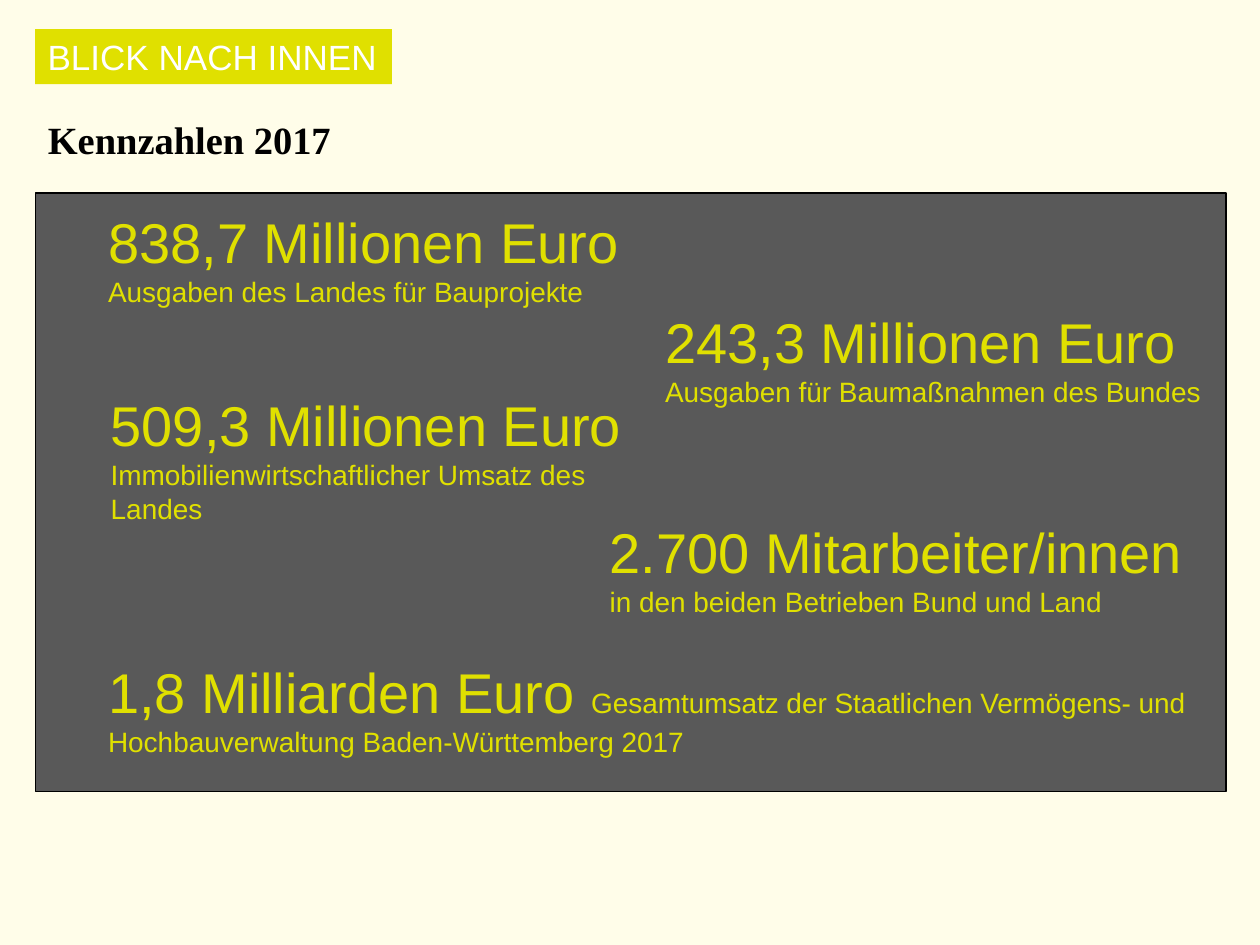
"""Build the key figures slide for 2017."""
import pptx
import pptx.dml.color
import pptx.enum.shapes
import pptx.enum.text
import pptx.util

Pt = pptx.util.Pt
RGBColor = pptx.dml.color.RGBColor

CREAM = RGBColor(0xFF, 0xFD, 0xE9)
GREY = RGBColor(0x59, 0x59, 0x59)
LIME = RGBColor(0xE0, 0xE0, 0x00)
WHITE = RGBColor(0xFF, 0xFF, 0xFF)
BLACK = RGBColor(0x00, 0x00, 0x00)

MARGIN = 20.16
FIGURE_HEIGHT = 65.5
FIGURES = [
    (54.7, 115.2, 370.8, FIGURE_HEIGHT, "838,7 Millionen Euro ",
     "Ausgaben des Landes für Bauprojekte"),
    (373, 172.1, 321.8, FIGURE_HEIGHT, "243,3 Millionen Euro ",
     "Ausgaben für Baumaßnahmen des Bundes"),
    (56.2, 219.6, 316.8, 85, "509,3 Millionen Euro ",
     "Immobilienwirtschaftlicher Umsatz des Landes"),
    (341.3, 292.3, 357.1, FIGURE_HEIGHT, "2.700 Mitarbeiter/innen ",
     "in den beiden Betrieben Bund und Land"),
    (54.7, 372.2, 643.7, FIGURE_HEIGHT, "1,8 Milliarden Euro ",
     "Gesamtumsatz der Staatlichen Vermögens- und "
     "Hochbauverwaltung Baden-Württemberg 2017"),
]


def style_span(span, size, color, name="Arial", bold=False):
    """Set the font of one run."""
    span.font.name = name
    span.font.size = Pt(size)
    span.font.bold = bold
    span.font.color.rgb = color


def align_text(frame):
    """Wrap the text and start it at the top left."""
    frame.word_wrap = True
    frame.vertical_anchor = pptx.enum.text.MSO_ANCHOR.TOP
    frame.paragraphs[0].alignment = pptx.enum.text.PP_ALIGN.LEFT


def add_panel(page, left, top, width, height, fill):
    """Add a plain filled rectangle without an outline."""
    panel = page.shapes.add_shape(
        pptx.enum.shapes.MSO_SHAPE.RECTANGLE,
        Pt(left), Pt(top), Pt(width), Pt(height))
    panel.shadow.inherit = False
    panel.fill.solid()
    panel.fill.fore_color.rgb = fill
    panel.line.fill.background()
    return panel


def add_label(page, text):
    """Add the section label."""
    label = add_panel(page, MARGIN, 16.6, 203.8, 31.5, LIME)
    align_text(label.text_frame)
    label.text_frame.word_wrap = False
    para = label.text_frame.paragraphs[0]
    para.text = text
    style_span(para.runs[0], 20, WHITE)


def set_title(page, text):
    """Place and format the title."""
    title = page.shapes.title
    title.left, title.top = Pt(MARGIN), Pt(62.6)
    title.width, title.height = Pt(675.4), Pt(33.8)
    title.text_frame.text = text
    align_text(title.text_frame)
    style_span(title.text_frame.paragraphs[0].runs[0], 22, BLACK,
               "Times New Roman", True)


def add_figure(page, left, top, width, height, amount, caption):
    """Add a large amount followed by its caption."""
    box = page.shapes.add_textbox(Pt(left), Pt(top), Pt(width), Pt(height))
    align_text(box.text_frame)
    para = box.text_frame.paragraphs[0]
    for text, size in ((amount, 32), (caption, 16)):
        span = para.add_run()
        span.text = text
        style_span(span, size, LIME)


def main():
    """Create and save the deck."""
    deck = pptx.Presentation()
    deck.slide_width, deck.slide_height = Pt(720), Pt(540)
    page = deck.slides.add_slide(deck.slide_layouts[5])
    page.background.fill.solid()
    page.background.fill.fore_color.rgb = CREAM
    set_title(page, "Kennzahlen 2017")
    panel = add_panel(page, MARGIN, 110.2, 680.4, 342, GREY)
    panel.line.color.rgb = BLACK
    panel.line.width = Pt(0.75)
    add_label(page, "BLICK NACH INNEN")
    for figure in FIGURES:
        add_figure(page, *figure)
    deck.save("out.pptx")


if __name__ == "__main__":
    main()
